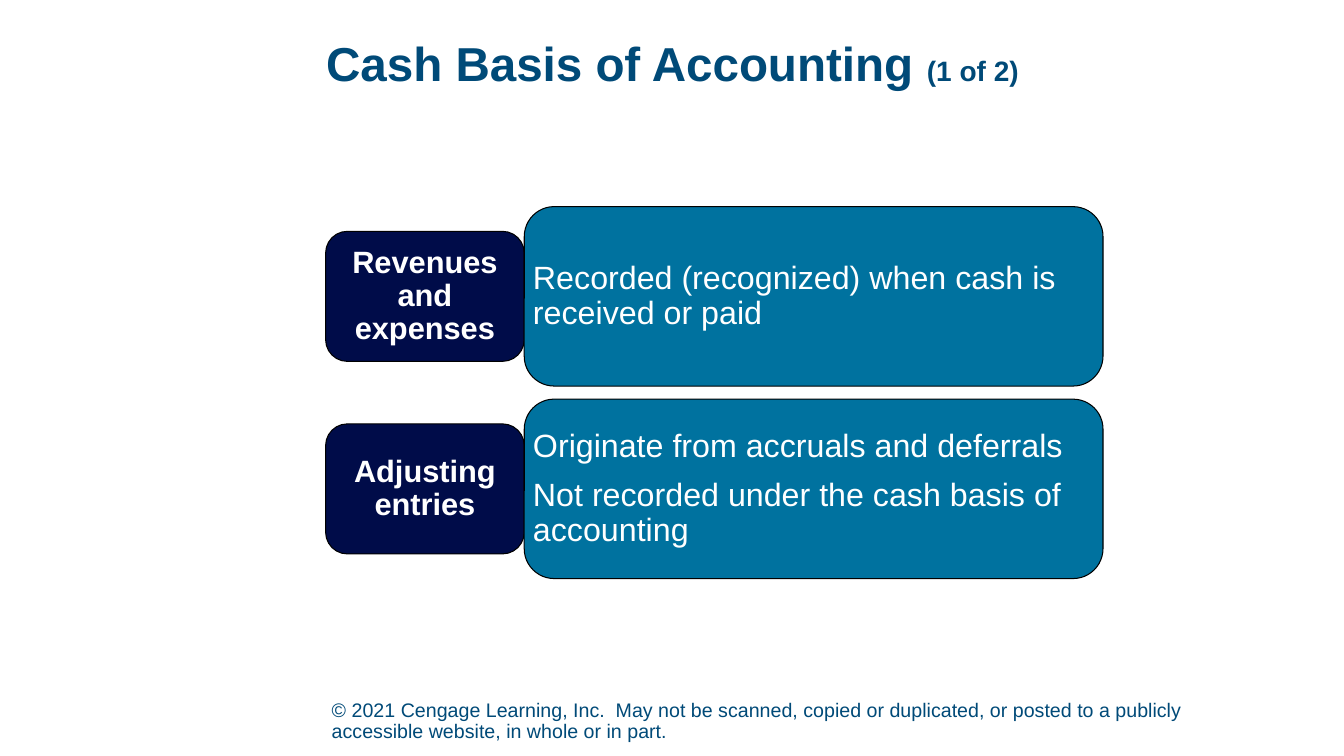
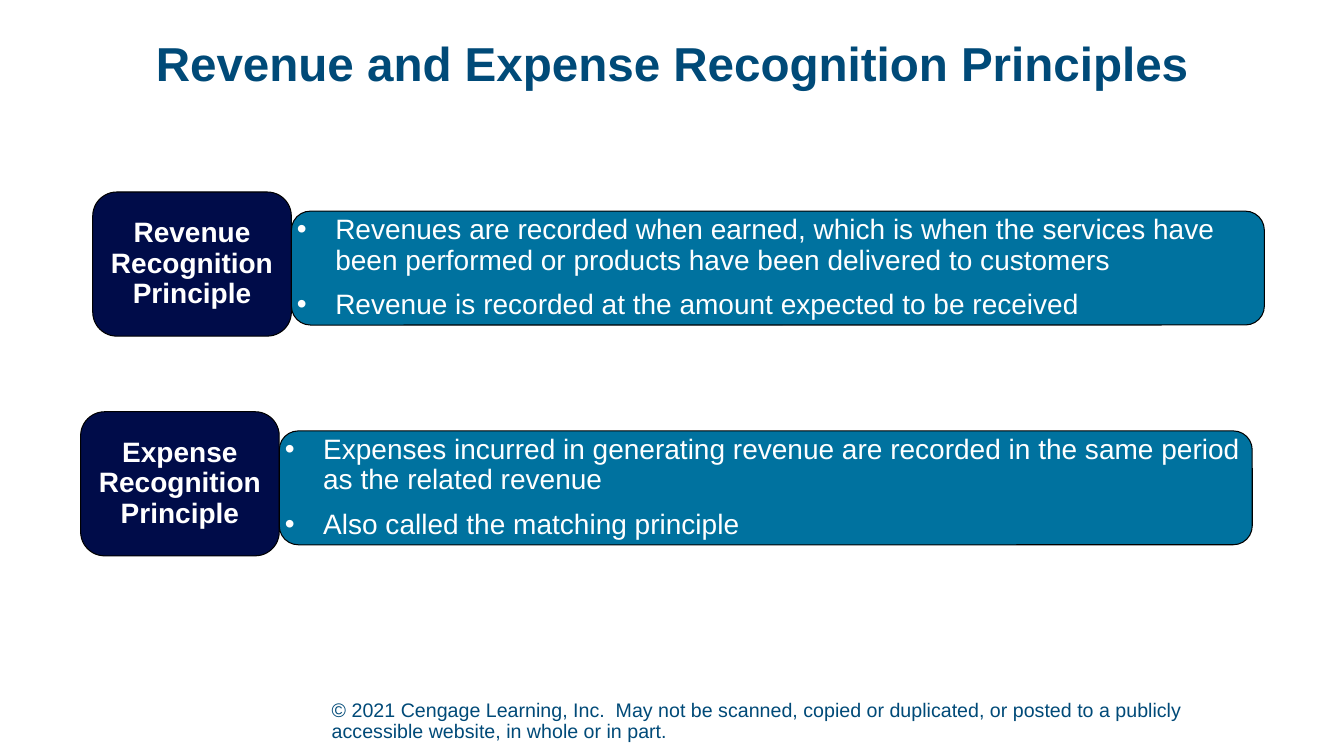
from dataclasses import dataclass

from lxml import etree
from pptx import Presentation
from pptx import util as u
from pptx.dml.color import RGBColor
from pptx.enum import shapes, text
from pptx.oxml.ns import qn

SLIDES = [
    {
        "title": [("Cash Basis of Accounting ", "title"), ("(1 of 2)", "part")],
        "rows": [
            ("Revenues and expenses",
             ["Recorded (recognized) when cash is received or paid"]),
            ("Adjusting entries",
             ["Originate from accruals and deferrals",
              "Not recorded under the cash basis of accounting"]),
        ],
        "left": 3.23, "middle": 2.94, "step": (0, 1.91), "lift": 0,
        "label": (1.97, 1.29), "panel": (5.74, 1.78),
        "styles": ("label_large", "body_large"), "bullets": False,
    },
    {
        "title": [("Revenue and Expense Recognition Principles", "title")],
        "rows": [
            ("Revenue Recognition Principle",
             ["Revenues are recorded when earned, which is when the services "
              "have been performed or products have been delivered to customers",
              "Revenue is recorded at the amount expected to be received"]),
            ("Expense Recognition Principle",
             ["Expenses incurred in generating revenue are recorded in the same "
              "period as the related revenue",
              "Also called the matching principle"]),
        ],
        "left": 0.92, "middle": 2.66, "step": (-0.12, 2.18), "lift": 0.04,
        "label": (1.97, 1.43), "panel": (9.65, 1.13),
        "styles": ("label", "body"), "bullets": True,
    },
]
FOOTER = ("© 2021 Cengage Learning, Inc.  May not be scanned, copied or duplicated, "
          "or posted to a publicly accessible website, in whole or in part.")


@dataclass(frozen=True)
class Theme:
    font = "Arial"
    ink = RGBColor.from_string("004A78")
    navy = RGBColor.from_string("000C49")
    blue = RGBColor.from_string("00729F")
    white = RGBColor.from_string("FFFFFF")
    black = RGBColor.from_string("000000")
    outline = 0.75
    leading = 0.9
    gap = 10
    indent = 0.38
    title_box = (0.92, 0.4, 11.5, 0.74)
    footer_box = (3.29, 6.95, 9.12, 0.4)
    # style: size, bold, colour
    styles = {
        "title": (34, True, ink), "part": (20, True, ink),
        "footer": (14, False, ink),
        "label": (20, True, white), "label_large": (22, True, white),
        "body": (20, False, white), "body_large": (23, False, white),
    }


T = Theme()


def apply(target, **values):
    for name, value in values.items():
        setattr(target, name, value)


def inches(box):
    return [u.Inches(v) for v in box]


def add_bullet(p):
    pPr = p._p.get_or_add_pPr()
    indent = u.Inches(T.indent)
    pPr.set("marL", str(indent))
    pPr.set("indent", str(-indent))
    etree.SubElement(pPr, qn("a:buFont")).set("typeface", T.font)
    etree.SubElement(pPr, qn("a:buChar")).set("char", "•")


def write(sp, paragraphs, align="LEFT", anchor="TOP", bullets=False):
    """Fill a shape with paragraphs, each a list of (text, style) runs."""
    tf = sp.text_frame
    apply(tf, word_wrap=True, auto_size=text.MSO_AUTO_SIZE.NONE,
          vertical_anchor=text.MSO_ANCHOR[anchor],
          margin_left=0, margin_top=0, margin_right=0, margin_bottom=0)
    for i, runs in enumerate(paragraphs):
        p = tf.add_paragraph() if i else tf.paragraphs[0]
        apply(p, alignment=text.PP_ALIGN[align], line_spacing=T.leading,
              space_before=u.Pt(T.gap if i else 0))
        if bullets:
            add_bullet(p)
        for words, style in runs:
            size, bold, color = T.styles[style]
            r = p.add_run()
            r.text = words
            apply(r.font, name=T.font, size=u.Pt(size), bold=bold)
            r.font.color.rgb = color


def add_card(slide, left, middle, size, fill):
    width, height = size
    box = (left, middle - height / 2, width, height)
    sp = slide.shapes.add_shape(shapes.MSO_SHAPE.ROUNDED_RECTANGLE, *inches(box))
    sp.shadow.inherit = False
    sp.fill.solid()
    sp.fill.fore_color.rgb = fill
    sp.line.color.rgb = T.black
    sp.line.width = u.Pt(T.outline)
    return sp


def add_rows(slide, data):
    dx, dy = data["step"]
    label_style, body_style = data["styles"]
    for i, (label, points) in enumerate(data["rows"]):
        left, middle = data["left"] + i * dx, data["middle"] + i * dy
        card = add_card(slide, left, middle - data["lift"], data["label"], T.navy)
        write(card, [[(label, label_style)]], "CENTER", "MIDDLE")
        panel = add_card(slide, left + data["label"][0], middle, data["panel"], T.blue)
        write(panel, [[(point, body_style)] for point in points],
              anchor="MIDDLE", bullets=data["bullets"])


def add_slide(prs, data):
    slide = prs.slides.add_slide(prs.slide_layouts[5])
    title = slide.shapes.title
    apply(title, **dict(zip(("left", "top", "width", "height"), inches(T.title_box))))
    write(title, [data["title"]], "CENTER")
    write(slide.shapes.add_textbox(*inches(T.footer_box)), [[(FOOTER, "footer")]])
    add_rows(slide, data)


def main():
    prs = Presentation()
    apply(prs, slide_width=u.Inches(13.33), slide_height=u.Inches(7.5))
    for data in SLIDES:
        add_slide(prs, data)
    prs.save("out.pptx")


if __name__ == "__main__":
    main()
